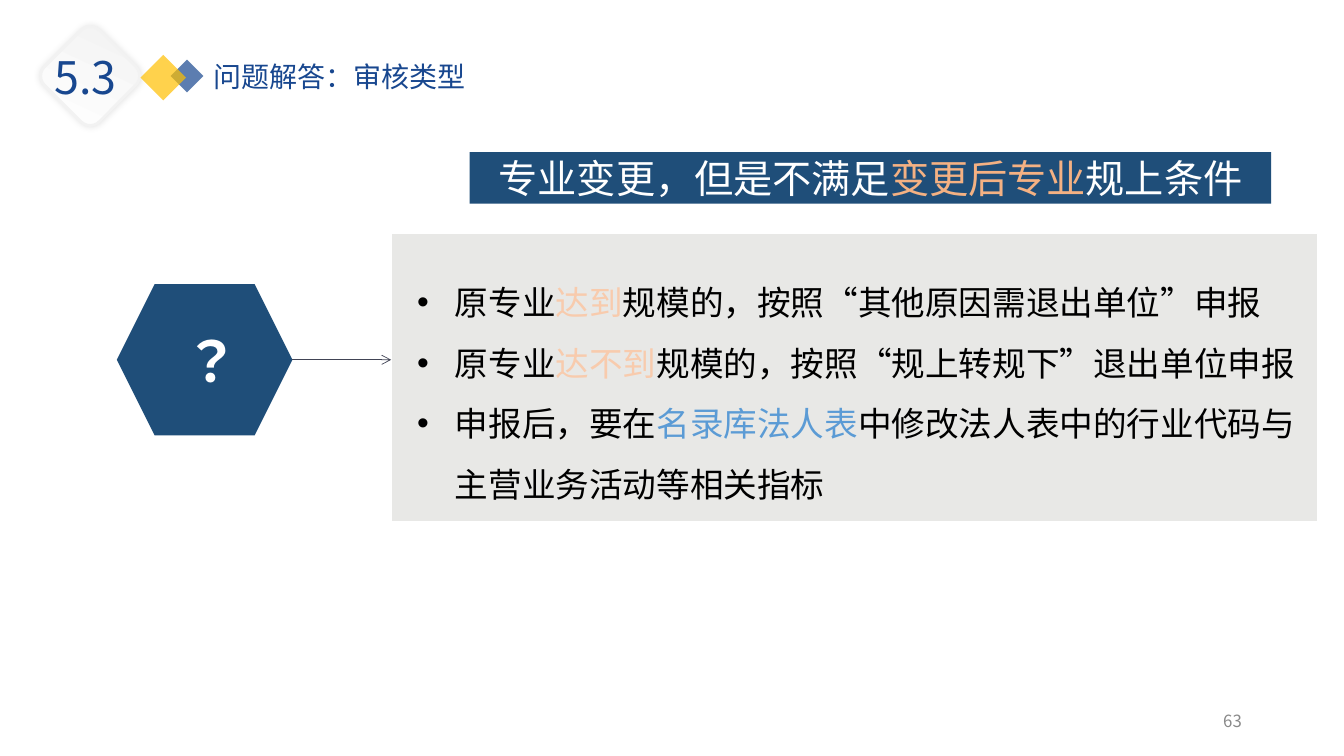
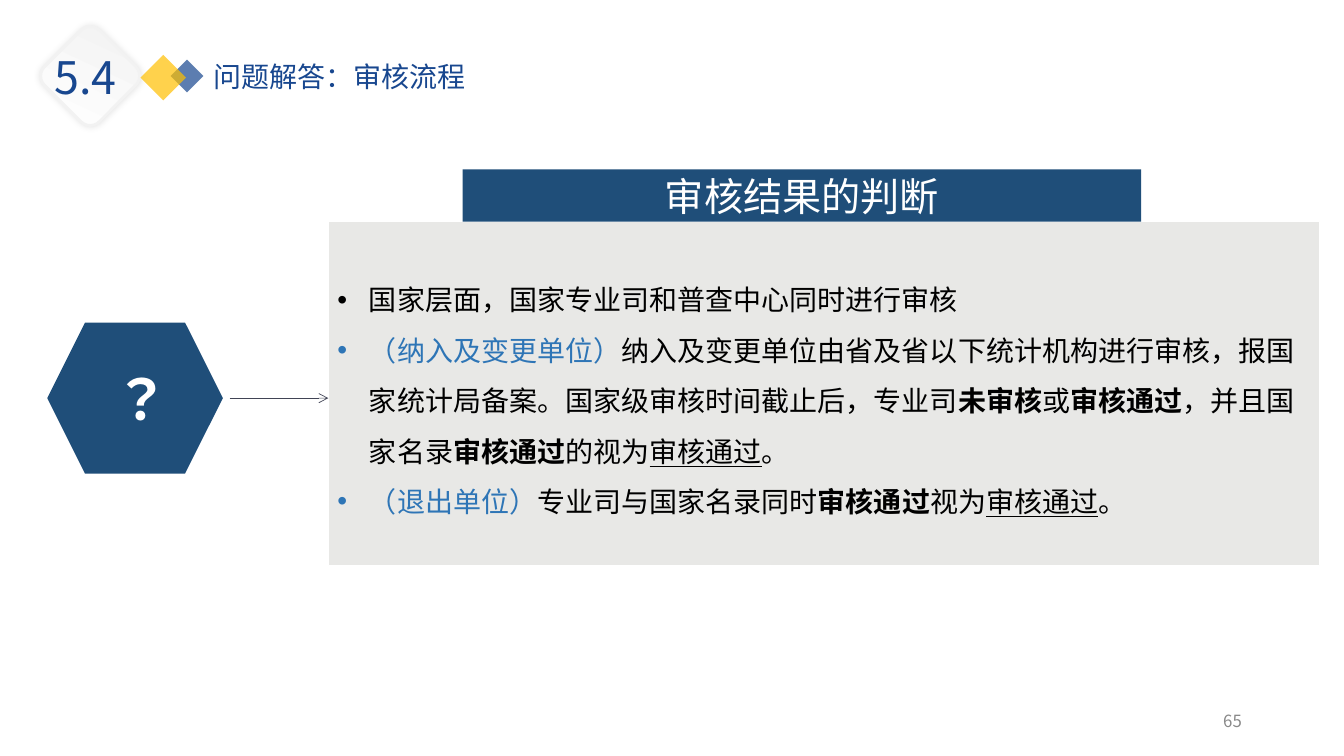
from lxml import etree
from pptx import Presentation
from pptx.dml.color import RGBColor
from pptx.enum.shapes import MSO_CONNECTOR, MSO_SHAPE
from pptx.enum.text import MSO_ANCHOR, MSO_AUTO_SIZE, PP_ALIGN
from pptx.oxml.ns import qn
from pptx.util import Pt

RECT, HEXAGON, ROUNDED = MSO_SHAPE.RECTANGLE, MSO_SHAPE.HEXAGON, MSO_SHAPE.ROUNDED_RECTANGLE
LEFT, CENTER, RIGHT = PP_ALIGN.LEFT, PP_ALIGN.CENTER, PP_ALIGN.RIGHT
TOP, MIDDLE = MSO_ANCHOR.TOP, MSO_ANCHOR.MIDDLE
GROW, FIXED = MSO_AUTO_SIZE.SHAPE_TO_FIT_TEXT, MSO_AUTO_SIZE.NONE

COLORS = {
    "white": "FFFFFF", "black": "000000", "pale": "F2F2F2", "panel": "E8E8E6",
    "navy": "1F4E79", "royal": "18478F", "gold": "FFC000", "arrow": "414455",
    "page": "898989", "apricot": "F4B183", "peach": "F8CBAD", "orange": "ED7D31",
    "sky": "5B9BD5", "blue": "2E75B6",
}
SANS, SANS_JP = "Noto Sans CJK SC", "Noto Sans CJK JP"

# Run styles, named in the content below
STYLES = {
    "plain": {"color": "black"},
    "bold": {"color": "black", "bold": True},
    "underline": {"color": "black", "underline": True},
    "outlined": {"color": "peach", "outline": "orange"},
    "sky": {"color": "sky"},
    "blue": {"color": "blue"},
    "white": {"color": "white"},
    "apricot": {"color": "apricot"},
    "royal": {"color": "royal"},
    "page": {"color": "page"},
    "mark": {"color": "white", "bold": True},
}

SLIDES = [
    {
        "section": "5.3", "title": "问题解答：审核类型", "page": "63",
        "banner": [("专业变更，但是不满足", "white"), ("变更后专业", "apricot"),
                   ("规上条件", "white")],
        "banner_font": "Arial",
        "points": [
            [("原专业", "plain"), ("达到", "outlined"),
             ("规模的，按照“其他原因需退出单位”申报", "plain")],
            [("原专业", "plain"), ("达不到", "outlined"),
             ("规模的，按照“规上转规下”退出单位申报", "plain")],
            [("申报后，要在", "plain"), ("名录库法人表", "sky"),
             ("中修改法人表中的行业代码与主营业务活动等相关指标", "plain")],
        ],
        "point_size": 24, "indent": 27,
        "panel_box": (279.4, 167, 661.7, 206),
        "banner_box": (335.5, 108.7, 572.5, 36.7),
        "points_box": (290.9, 183.6, 650.9, 225.4),
        "hexagon_at": (83.5, 203),
    },
    {
        "section": "5.4", "title": "问题解答：审核流程", "page": "65",
        "banner": [("审核结果的判断", "white")],
        "banner_font": SANS,
        "points": [
            [("国家层面，国家专业司和普查中心同时进行审核", "plain")],
            [("（纳入及变更单位）", "blue"),
             ("纳入及变更单位由省及省以下统计机构进行审核，报国家统计局备案。"
              "国家级审核时间截止后，专业司", "plain"),
             ("未审核", "bold"), ("或", "plain"), ("审核通过", "bold"),
             ("，并且国家名录", "plain"), ("审核通过", "bold"), ("的视为", "plain"),
             ("审核通过", "underline"), ("。", "plain")],
            [("（退出单位）", "blue"), ("专业司与国家名录同时", "plain"),
             ("审核通过", "bold"), ("视为", "plain"),
             ("审核通过", "underline"), ("。", "plain")],
        ],
        "point_size": 20, "indent": 22.5,
        "panel_box": (234.5, 158.4, 708, 245.5),
        "banner_box": (330.5, 121, 484.6, 37.4),
        "points_box": (234, 186.5, 707.8, 188.6),
        "hexagon_at": (33.8, 230.4),
    },
]

HEXAGON_SIZE = (125.4, 108)
ARROW_LENGTH = 70.5
BADGE_BOX = (36.7, 26.6, 55.4, 55.4)
DIAMONDS = [("royal", (125.3, 46, 16.6, 16.6)), ("gold", (105.1, 43.9, 23, 23))]
SECTION_BOX = (31.7, 31.7, 60.5, 46)
TITLE_BOX = (145.4, 38.9, 327.6, 31.7)
PAGE_BOX = (678.2, 500.4, 216, 28.8)


def rgb(name):
    return RGBColor.from_string(COLORS[name])


def points(box):
    return [Pt(length) for length in box]


def add_xml(parent, tag, **attributes):
    return etree.SubElement(parent, qn(tag), attributes)


def add_color_xml(parent, name):
    return add_xml(parent, "a:srgbClr", val=COLORS[name])


def add_block(slide, kind, box, fill, line=None, line_width=1):
    block = slide.shapes.add_shape(kind, *points(box))
    block.shadow.inherit = False
    block.fill.solid()
    block.fill.fore_color.rgb = rgb(fill)
    if line:
        block.line.color.rgb = rgb(line)
        block.line.width = Pt(line_width)
    else:
        block.line.fill.background()
    return block


def add_run(paragraph, text, style, size, font):
    look = STYLES[style]
    run = paragraph.add_run()
    run.text = text
    run.font.size = Pt(size)
    run.font.name = font
    run.font.color.rgb = rgb(look["color"])
    run.font.bold = look.get("bold", False)
    run.font.underline = look.get("underline", False)
    properties = run.font._element
    add_xml(properties, "a:ea", typeface=SANS if font == "Arial" else font)
    if "outline" in look:
        outline = etree.Element(qn("a:ln"), w=str(Pt(1.75)))
        add_color_xml(add_xml(outline, "a:solidFill"), look["outline"])
        properties.insert(0, outline)


def write(shape, paragraphs, size, font=SANS, align=LEFT, anchor=TOP,
          wrap=True, fit=FIXED, indent=None):
    """Fill a shape with paragraphs of (text, style) runs; an indent adds bullets."""
    frame = shape.text_frame
    frame.word_wrap = wrap
    frame.auto_size = fit
    frame.vertical_anchor = anchor
    for index, runs in enumerate(paragraphs):
        paragraph = frame.add_paragraph() if index else frame.paragraphs[0]
        paragraph.alignment = align
        if indent:
            paragraph.line_spacing = 1.5
            properties = paragraph._p.get_or_add_pPr()
            properties.set("marL", str(Pt(indent)))
            properties.set("indent", str(-Pt(indent)))
            add_xml(properties, "a:buFont", typeface="Arial")
            add_xml(properties, "a:buChar", char="•")
        for text, style in runs:
            add_run(paragraph, text, style, size, font)


def add_text(slide, box, paragraphs, size, **options):
    write(slide.shapes.add_textbox(*points(box)), paragraphs, size, **options)


def add_badge(slide):
    badge = add_block(slide, ROUNDED, BADGE_BOX, "white", "pale", 2)
    badge.rotation = 45
    badge.fill.gradient()
    badge.fill.gradient_angle = 110
    for stop, color in zip(badge.fill.gradient_stops, ("white", "pale")):
        stop.color.rgb = rgb(color)
    effects = badge._element.spPr.find(qn("a:effectLst"))
    shadow = add_xml(effects, "a:outerShdw", blurRad=str(Pt(5)), dist="0", dir="0",
                     algn="ctr", rotWithShape="0")
    add_xml(add_color_xml(shadow, "black"), "a:alpha", val="11000")


def add_diamond(slide, color, box):
    diamond = add_block(slide, RECT, box, color)
    diamond.rotation = 225
    fill_color = diamond._element.spPr.find(qn("a:solidFill"))[0]
    add_xml(fill_color, "a:alpha", val="70000")


def add_header(slide, section, title):
    add_badge(slide)
    (back, back_box), (front, front_box) = DIAMONDS
    add_diamond(slide, back, back_box)
    add_text(slide, SECTION_BOX, [[(section, "royal")]], 32, wrap=False, fit=GROW)
    add_diamond(slide, front, front_box)
    add_text(slide, TITLE_BOX, [[(title, "royal")]], 20, fit=GROW)


def add_arrow(slide, start_x, end_x, y):
    arrow = slide.shapes.add_connector(MSO_CONNECTOR.STRAIGHT,
                                       *points((start_x, y, end_x, y)))
    arrow.line.color.rgb = rgb("arrow")
    arrow.line.width = Pt(0.5)
    add_xml(arrow.line._get_or_add_ln(), "a:tailEnd", type="arrow")
    add_xml(arrow._element.spPr, "a:effectLst")


def build_slide(deck, content):
    slide = deck.slides.add_slide(deck.slide_layouts[6])
    panel_left = content["panel_box"][0]
    hexagon_box = content["hexagon_at"] + HEXAGON_SIZE
    add_block(slide, RECT, content["panel_box"], "panel", "white")
    banner = add_block(slide, RECT, content["banner_box"], "navy")
    write(banner, [content["banner"]], 28, font=content["banner_font"],
          align=CENTER, anchor=MIDDLE)
    question = add_block(slide, HEXAGON, hexagon_box, "navy")
    write(question, [[(" ？", "mark")]], 40, font=SANS_JP, align=CENTER, anchor=MIDDLE)
    add_text(slide, content["points_box"], content["points"], content["point_size"],
             fit=GROW, indent=content["indent"])
    add_header(slide, content["section"], content["title"])
    add_arrow(slide, panel_left - ARROW_LENGTH, panel_left,
              hexagon_box[1] + HEXAGON_SIZE[1] / 2)
    add_text(slide, PAGE_BOX, [[(content["page"], "page")]], 12,
             align=RIGHT, anchor=MIDDLE)


def main():
    deck = Presentation()
    deck.slide_width, deck.slide_height = Pt(960), Pt(540)
    for content in SLIDES:
        build_slide(deck, content)
    deck.save("out.pptx")


if __name__ == "__main__":
    main()
